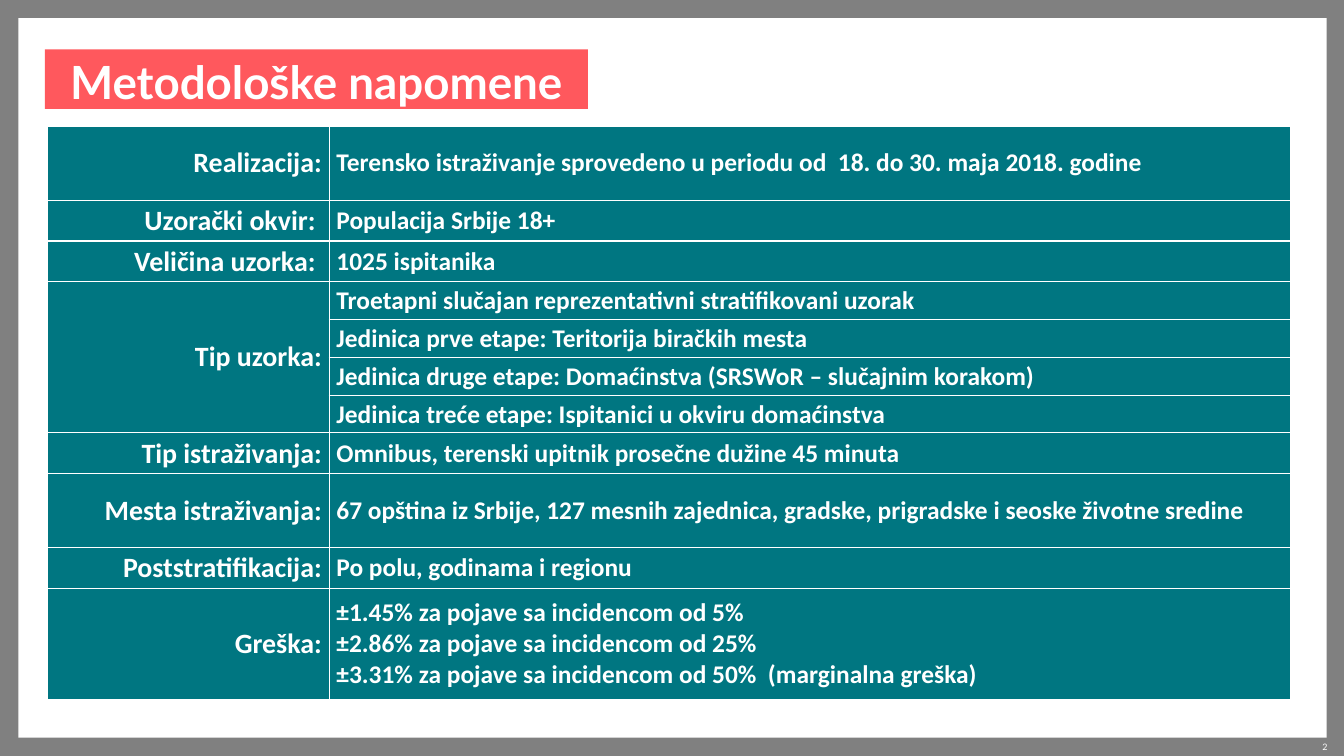
from dataclasses import dataclass

from lxml import etree
from pptx import Presentation
from pptx import util as u
from pptx.dml.color import RGBColor
from pptx.enum import shapes, text
from pptx.oxml import ns

HUES = {"frame": "808080", "white": "FFFFFF", "coral": "FF585D", "teal": "007681"}
ALIGN = text.PP_ALIGN
MIDDLE = text.MSO_ANCHOR.MIDDLE


@dataclass
class Box:
    left: float
    top: float
    width: float
    height: float

    def place(self) -> list[u.Length]:
        return [u.Inches(n) for n in (self.left, self.top, self.width, self.height)]


@dataclass
class Topic:
    label: str
    notes: list[str]  # one table row per note
    height: float = 0.4


TOPICS = [
    Topic("Realizacija:",
          ["Terensko istraživanje sprovedeno u periodu od  18. do 30. maja 2018. godine"], 0.81),
    Topic("Uzorački okvir: ", ["Populacija Srbije 18+"]),
    Topic("Veličina uzorka: ", ["1025 ispitanika"]),
    Topic("Tip uzorka:", [
        "Troetapni slučajan reprezentativni stratifikovani uzorak",
        "Jedinica prve etape: Teritorija biračkih mesta",
        "Jedinica druge etape: Domaćinstva (SRSWoR – slučajnim korakom)",
        "Jedinica treće etape: Ispitanici u okviru domaćinstva",
    ]),
    Topic("Tip istraživanja:", ["Omnibus, terenski upitnik prosečne dužine 45 minuta"]),
    Topic("Mesta istraživanja:",
          ["67 opština iz Srbije, 127 mesnih zajednica, gradske, prigradske i seoske životne sredine"],
          0.81),
    Topic("Poststratifikacija:", ["Po polu, godinama i regionu"]),
    Topic("Greška:", [
        "±1.45% za pojave sa incidencom od 5%\n"
        "±2.86% za pojave sa incidencom od 25%\n"
        "±3.31% za pojave sa incidencom od 50%  (marginalna greška)",
    ], 1.21),
]


def hue(name: str) -> RGBColor:
    return RGBColor.from_string(HUES[name])


def paint(fill, name: str) -> None:
    fill.solid()
    fill.fore_color.rgb = hue(name)


def add_rect(slide, box: Box, name: str):
    rect = slide.shapes.add_shape(shapes.MSO_SHAPE.RECTANGLE, *box.place())
    rect.shadow.inherit = False
    paint(rect.fill, name)
    rect.line.fill.background()
    return rect


def write(frame, words: str, size: float, face: str, align, bold: bool = True) -> None:
    frame.text = words
    for para in frame.paragraphs:
        para.alignment = align
        para.font.size = u.Pt(size)
        para.font.name = face
        para.font.bold = bold
        para.font.color.rgb = hue("white")


def pad(frame, side: float, top: float) -> None:
    frame.margin_left = frame.margin_right = u.Inches(side)
    frame.margin_top, frame.margin_bottom = u.Inches(top), 0


def style(cell) -> None:
    cell.vertical_anchor = MIDDLE
    cell.margin_left = cell.margin_right = u.Inches(0.08)
    cell.margin_top = cell.margin_bottom = u.Inches(0.04)
    props = cell._tc.get_or_add_tcPr()
    for side in ("L", "R", "T", "B"):
        line = etree.SubElement(props, ns.qn("a:ln" + side), w=str(u.Pt(1)))
        solid = etree.SubElement(line, ns.qn("a:solidFill"))
        etree.SubElement(solid, ns.qn("a:srgbClr"), val=HUES["white"])
    paint(cell.fill, "teal")


def add_grid(slide, box: Box, topics: list[Topic]) -> None:
    count = sum(len(topic.notes) for topic in topics)
    grid = slide.shapes.add_table(count, 2, *box.place()).table
    for col, width in zip(grid.columns, (3.08, 10.52)):
        col.width = u.Inches(width)
    for cell in grid.iter_cells():
        style(cell)
    row = 0
    for topic in topics:
        last = row + len(topic.notes) - 1
        head = grid.cell(row, 0)
        if last > row:
            head.merge(grid.cell(last, 0))
        write(head.text_frame, topic.label, 22, "Calibri", ALIGN.RIGHT)
        for note in topic.notes:
            grid.rows[row].height = u.Inches(topic.height)
            write(grid.cell(row, 1).text_frame, note, 20, "Calibri", ALIGN.LEFT)
            row += 1


def main() -> None:
    deck = Presentation()
    deck.slide_width, deck.slide_height = u.Inches(14.7), u.Inches(8.27)
    slide = deck.slides.add_slide(deck.slide_layouts[6])

    # Grey frame around a white page
    paint(slide.background.fill, "frame")
    add_rect(slide, Box(0.2, 0.2, 14.31, 7.87), "white")

    # Page number
    page = slide.shapes.add_textbox(*Box(13.73, 8.1, 0.79, 0.13).place()).text_frame
    page.word_wrap = True
    pad(page, 0, 0)
    write(page, "2", 7, "Lato", ALIGN.RIGHT, bold=False)
    page.paragraphs[0].line_spacing = 1.1

    # Title
    title = add_rect(slide, Box(0.49, 0.54, 5.94, 0.65), "coral").text_frame
    title.word_wrap = False
    title.vertical_anchor = MIDDLE
    pad(title, 0.09, 0.08)
    write(title, "Metodološke napomene", 36, "Lato", ALIGN.CENTER)
    title.paragraphs[0].line_spacing = u.Pt(41)

    # Table of method notes
    add_grid(slide, Box(0.52, 1.38, 13.6, 6.26), TOPICS)

    deck.save("out.pptx")


if __name__ == "__main__":
    main()
